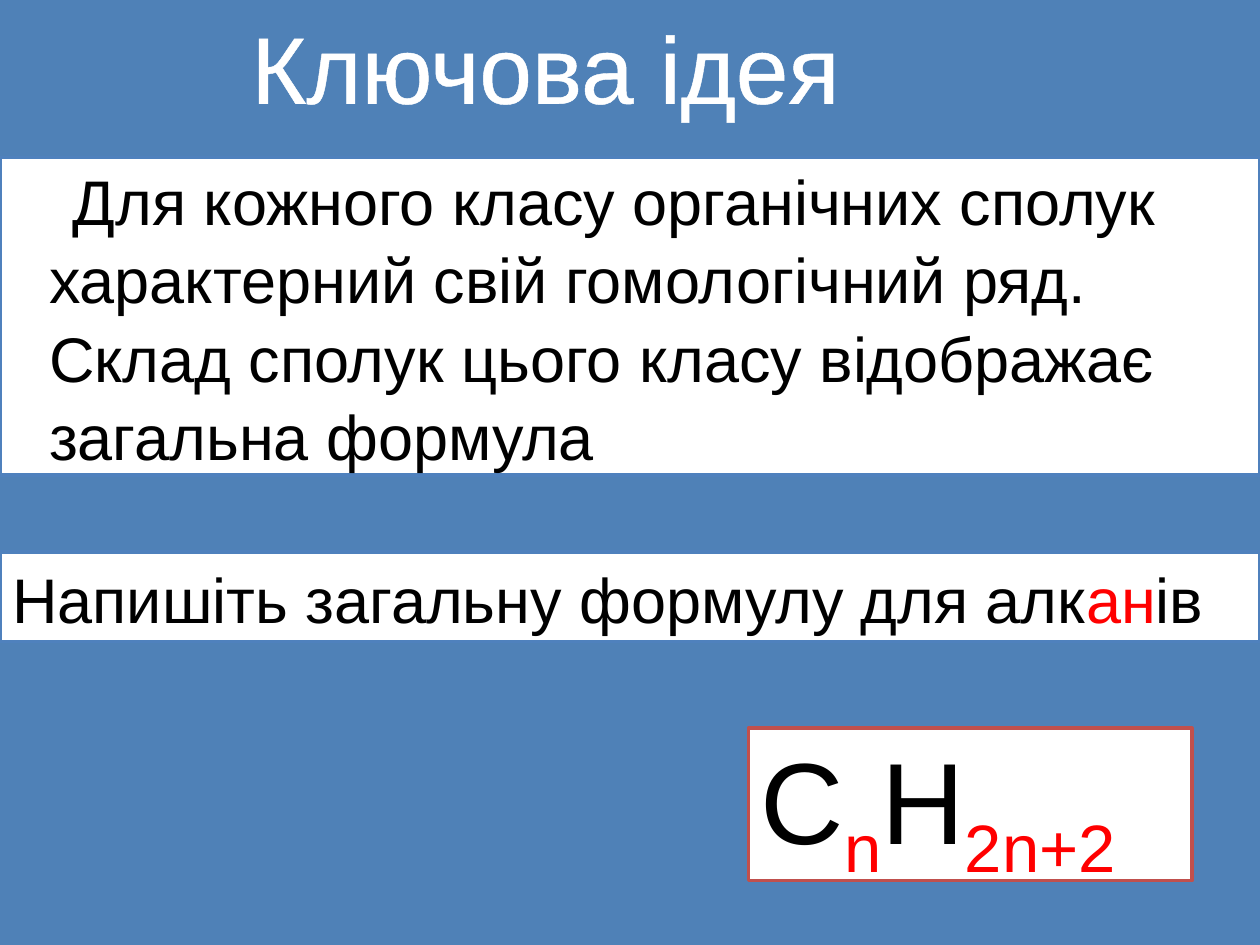
from lxml import etree
from pptx import Presentation
from pptx.dml.color import RGBColor
from pptx.enum.shapes import MSO_SHAPE
from pptx.enum.text import MSO_ANCHOR, MSO_AUTO_SIZE, PP_ALIGN
from pptx.oxml.ns import qn
from pptx.util import Cm, Pt

RECTANGLE = MSO_SHAPE.RECTANGLE
MIDDLE = MSO_ANCHOR.MIDDLE
NO_AUTOFIT = MSO_AUTO_SIZE.NONE
LEFT, CENTER = PP_ALIGN.LEFT, PP_ALIGN.CENTER
TITLE_ONLY = 5
FONT = "Arial"
WHITE, BLACK, RED = "FFFFFF", "000000", "FF0000"
BACKGROUND, BLUE, BRICK = "4F81B7", "4F81BD", "C0504D"


def color(value):
    """Return the colour for a hex string."""
    return RGBColor.from_string(value)


def add_run(paragraph, text, size=36, fill=BLACK, baseline=0, outline=None):
    """Append formatted text to a paragraph."""
    run = paragraph.add_run()
    run.text = text
    run.font.name = FONT
    run.font.size = Pt(size)
    run.font.color.rgb = color(fill)
    properties = run.font._element
    if baseline:
        properties.set("baseline", str(baseline * 1000))
    if outline:
        line = etree.Element(qn("a:ln"), w=str(Pt(1.45)))
        solid = etree.SubElement(line, qn("a:solidFill"))
        etree.SubElement(solid, qn("a:srgbClr"), val=outline)
        properties.insert(0, line)


def prepare_text(shape, alignment=LEFT, wrap=True):
    """Set up the text frame and return its first paragraph."""
    frame = shape.text_frame
    frame.auto_size = NO_AUTOFIT
    frame.word_wrap = wrap
    frame.vertical_anchor = MIDDLE
    paragraph = frame.paragraphs[0]
    paragraph.alignment = alignment
    paragraph.line_spacing = 1.04
    return paragraph


def add_title(slide, text):
    """Place the heading in the title placeholder."""
    title = slide.shapes.title
    title.left, title.top = Cm(4.75), Cm(0)
    title.width, title.height = Cm(12.5), Cm(2.57)
    paragraph = prepare_text(title, CENTER, wrap=False)
    add_run(paragraph, text, size=54, fill=WHITE, outline=WHITE)


def add_panel(slide, left, top, width, height, border=BLUE):
    """Add a white bordered panel and return its paragraph."""
    shape = slide.shapes.add_shape(
        RECTANGLE, Cm(left), Cm(top), Cm(width), Cm(height))
    shape.shadow.inherit = False
    shape.fill.solid()
    shape.fill.fore_color.rgb = color(WHITE)
    shape.line.color.rgb = color(border)
    shape.line.width = Pt(2)
    return prepare_text(shape)


def add_idea(slide):
    """Add the statement with its indented first line."""
    paragraph = add_panel(slide, 0, 3.18, 25.4, 6.4)
    properties = paragraph._p.get_or_add_pPr()
    properties.set("marL", str(Cm(0.74)))
    properties.set("indent", str(Cm(0.48)))
    add_run(paragraph, "Для кожного класу органічних сполук характерний свій "
                       "гомологічний ряд. Склад сполук цього класу відображає "
                       "загальна формула")


def add_task(slide):
    """Add the task with the highlighted suffix."""
    paragraph = add_panel(slide, 0, 11.13, 25.4, 1.8)
    add_run(paragraph, "Напишіть загальну формулу для алк")
    add_run(paragraph, "ан", fill=RED)
    add_run(paragraph, "ів")


def add_formula(slide):
    """Add the general formula with red subscripts."""
    paragraph = add_panel(slide, 15.09, 14.68, 8.94, 3.07, border=BRICK)
    for element, index in (("С", "n"), ("Н", "2n+2")):
        add_run(paragraph, element, size=66)
        add_run(paragraph, index, size=66, fill=RED, baseline=-25)


def main():
    """Build and save the slide."""
    presentation = Presentation()
    presentation.slide_width, presentation.slide_height = Cm(25.4), Cm(19.05)
    slide = presentation.slides.add_slide(presentation.slide_layouts[TITLE_ONLY])
    slide.background.fill.solid()
    slide.background.fill.fore_color.rgb = color(BACKGROUND)
    add_title(slide, "Ключова ідея")
    add_idea(slide)
    add_task(slide)
    add_formula(slide)
    presentation.save("out.pptx")


if __name__ == "__main__":
    main()
